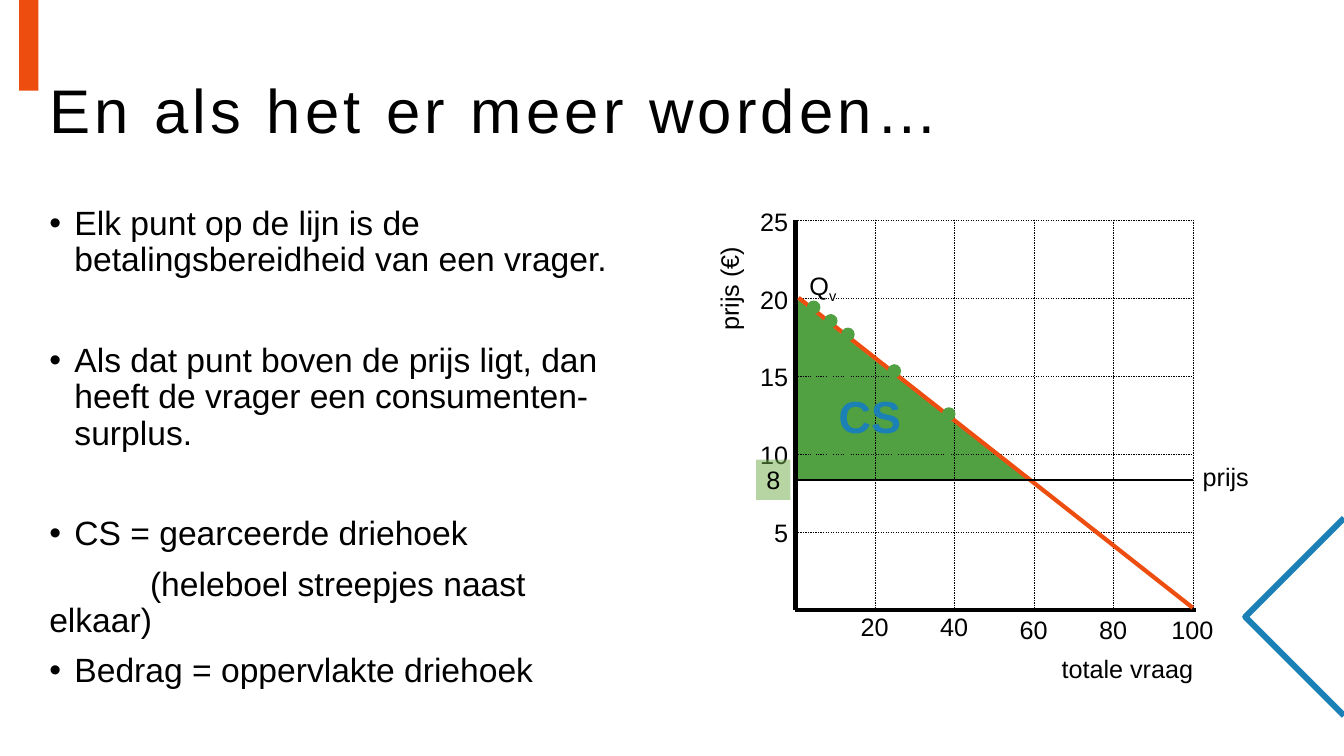
"""Build a slide that explains consumer surplus beside a demand chart."""
from lxml.etree import SubElement
from pptx import Presentation
from pptx.dml.color import RGBColor
from pptx.enum.dml import MSO_LINE as Dash, MSO_PATTERN as Pattern
from pptx.enum.shapes import MSO_CONNECTOR as Connector, MSO_SHAPE as Shape
from pptx.enum.text import MSO_ANCHOR as Anchor
from pptx.oxml.ns import qn
from pptx.util import Inches, Pt

BLACK, ORANGE, GREEN, BLUE = "000000", "ED4D0F", "51A041", "1A80B6"
color = RGBColor.from_string

deck = Presentation()
deck.slide_width, deck.slide_height = Inches(13.33), Inches(7.5)
page = deck.slides.add_slide(deck.slide_layouts[6])
shapes = page.shapes


def write(box, text, size=18, ink=BLACK, wrap=False, bold=False):
    """Put the first paragraph in a box and return its run."""
    box.text_frame.word_wrap = wrap
    span = box.text_frame.paragraphs[0].add_run()
    span.text = text
    for name, value in {"name": "Arial", "size": Pt(size), "bold": bold}.items():
        setattr(span.font, name, value)
    span.font.color.rgb = color(ink)
    return span


def draw_line(start, end, ink=BLACK, width=0.25, dash=None):
    """Draw a straight line between two points in inches."""
    line = shapes.add_connector(Connector.STRAIGHT, *map(Inches, start + end))
    line.line.color.rgb = color(ink)
    line.line.width = Pt(width)
    line.line.dash_style = dash
    SubElement(line._element.spPr, qn("a:effectLst"))


left, top, right, bottom = 7.89, 2.18, 11.83, 6.05
column, row = (right - left) / 5, (bottom - top) / 5
price = 4.76

accent = shapes.add_shape(Shape.RECTANGLE, *map(Inches, (0.19, 0, 0.19, 0.9)))
accent.fill.solid()
accent.fill.fore_color.rgb = color(ORANGE)
accent.line.fill.background()
accent.shadow.inherit = False

outline = shapes.build_freeform(Inches(13.33), Inches(5.14), 1.0)
outline.add_line_segments([(Inches(12.35), Inches(6.12)), (Inches(13.33), Inches(7.1))], close=False)
chevron = outline.convert_to_shape()
chevron.fill.background()
chevron.line.color.rgb = color(BLUE)
chevron.line.width = Pt(4.25)
chevron.shadow.inherit = False

outline = shapes.build_freeform(Inches(left), Inches(top + row), 1.0)
outline.add_line_segments([(Inches(left), Inches(price)), (Inches(10.19), Inches(price))])
surplus = outline.convert_to_shape()
surplus.fill.patterned()
surplus.fill.pattern = Pattern.DARK_VERTICAL
surplus.fill.fore_color.rgb = color(GREEN)
surplus.fill.back_color.rgb = color("FFFFFF")
surplus.line.fill.background()
surplus.shadow.inherit = False

title = shapes.add_textbox(*map(Inches, (0.39, 0.4, 12.58, 1.45)))
title.text_frame.vertical_anchor = Anchor.MIDDLE
span = write(title, "En als het er meer worden…", 44, wrap=True)
span._r.get_or_add_rPr().set("spc", "300")
title.text_frame.paragraphs[0].line_spacing = 0.9

body = shapes.add_textbox(*map(Inches, (0.39, 2, 5.78, 5.1)))
body.text_frame.word_wrap = True
points = [
    ("Elk punt op de lijn is de betalingsbereidheid van een vrager.", 0, True),
    ("Als dat punt boven de prijs ligt, dan heeft de vrager een consumenten-surplus.", 46, True),
    ("CS = gearceerde driehoek", 46, True),
    ("(heleboel streepjes naast elkaar)", 10, False),
    ("Bedrag = oppervlakte driehoek", 10, True),
]
for index, (text, space, bulleted) in enumerate(points):
    para = body.text_frame.add_paragraph() if index else body.text_frame.paragraphs[0]
    para.line_spacing, para.space_before = 0.9, Pt(space)
    span = para.add_run()
    span.text = text
    span.font.name, span.font.size = "Arial", Pt(24)
    span.font.color.rgb = color(BLACK)
    margin, indent = (0.25, -0.25) if bulleted else (0, 1)
    properties = para._p.get_or_add_pPr()
    properties.set("marL", str(Inches(margin)))
    properties.set("indent", str(Inches(indent)))
    if bulleted:
        SubElement(properties, qn("a:buFont")).set("typeface", "Arial")
        SubElement(properties, qn("a:buChar")).set("char", "•")

draw_line((left, top), (left, bottom), width=3)
for step in range(5):
    y, x = top + step * row, left + (step + 1) * column
    draw_line((left, y), (right, y), dash=Dash.DASH)
    draw_line((x, top), (x, bottom), dash=Dash.DASH)

labels = [("totale vraag", 10.43, 6.43, 1.52), ("prijs (€)", 6.71, 2.66, 1.04),
          ("prijs", right, 4.53, 0.66), ("Q", 7.93, 2.63, 0.49)]
for step in range(5):
    value, demand = 25 - 5 * step, 20 * (step + 1)
    width = 0.48 if value > 5 else 0.34
    labels.append((str(value), 7.92 - width, 2 + 0.77 * step, width))
    width = 0.62 if demand == 100 else 0.48
    x = left + (step + 1) * column - width / 2
    labels.append((str(demand), x, 6.02 if demand < 60 else 6.05, width))
for text, x, y, width in labels:
    label = shapes.add_textbox(*map(Inches, (x, y, width, 0.4)))
    write(label, text)
    if text == "prijs (€)":
        label.rotation = 270
    if text == "Q":
        span = label.text_frame.paragraphs[0].add_run()
        span.text = "v"
        span.font.name, span.font.size = "Arial", Pt(18)
        span.font.color.rgb = color(BLACK)
        span._r.get_or_add_rPr().set("baseline", "-25000")

draw_line((right + 0.03, bottom), (left, bottom), width=3)
draw_line((7.92, top + row), (right, bottom - 0.02), ORANGE, 3)

marker = shapes.add_shape(Shape.RECTANGLE, *map(Inches, (7.5, 4.56, 0.34, 0.4)))
marker.fill.solid()
marker.fill.fore_color.rgb = color("70AD47")
shade = marker._element.spPr.find(qn("a:solidFill"))[0]
SubElement(shade, qn("a:alpha")).set("val", "50000")
marker.line.fill.background()
marker.shadow.inherit = False
write(marker, "8")

draw_line((left, price), (right, price), width=1.5)

size = 0.12
for x in (8.07, 8.24, 8.41, 8.87, 9.41):
    y = 2.93 + 0.79 * (x - 7.92)
    dot = shapes.add_shape(Shape.OVAL, *map(Inches, (x - size / 2, y - size / 2, size, size)))
    dot.fill.solid()
    dot.fill.fore_color.rgb = dot.line.color.rgb = color(GREEN)
    dot.line.width = Pt(1)
    dot.shadow.inherit = False
    draw_line((x, price - 0.04), (x, y + 0.11), GREEN, 3.5)

area = shapes.add_textbox(*map(Inches, (8.22, 3.81, 0.83, 0.64)))
write(area, "CS", 32, BLUE, bold=True)

deck.save("out.pptx")
